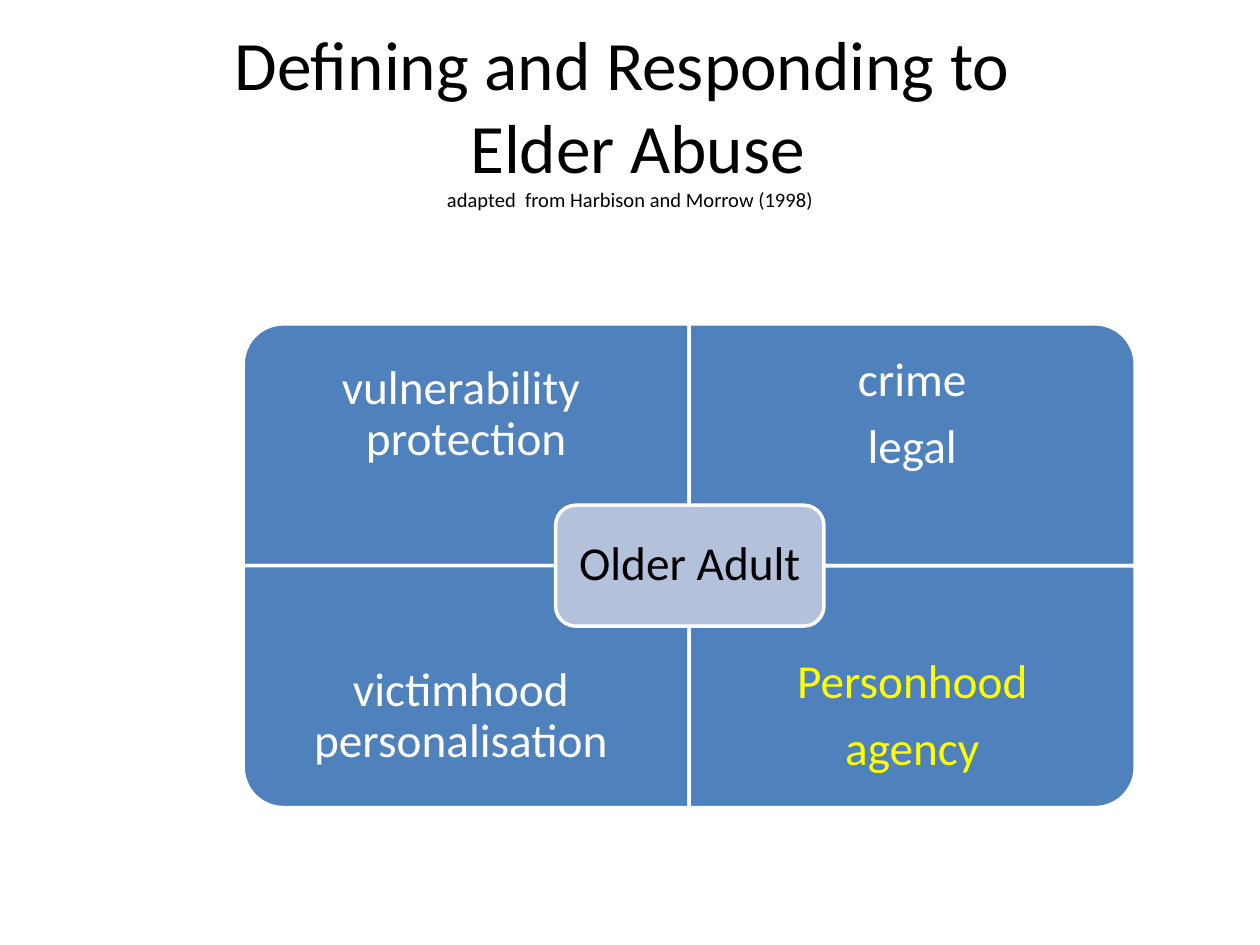
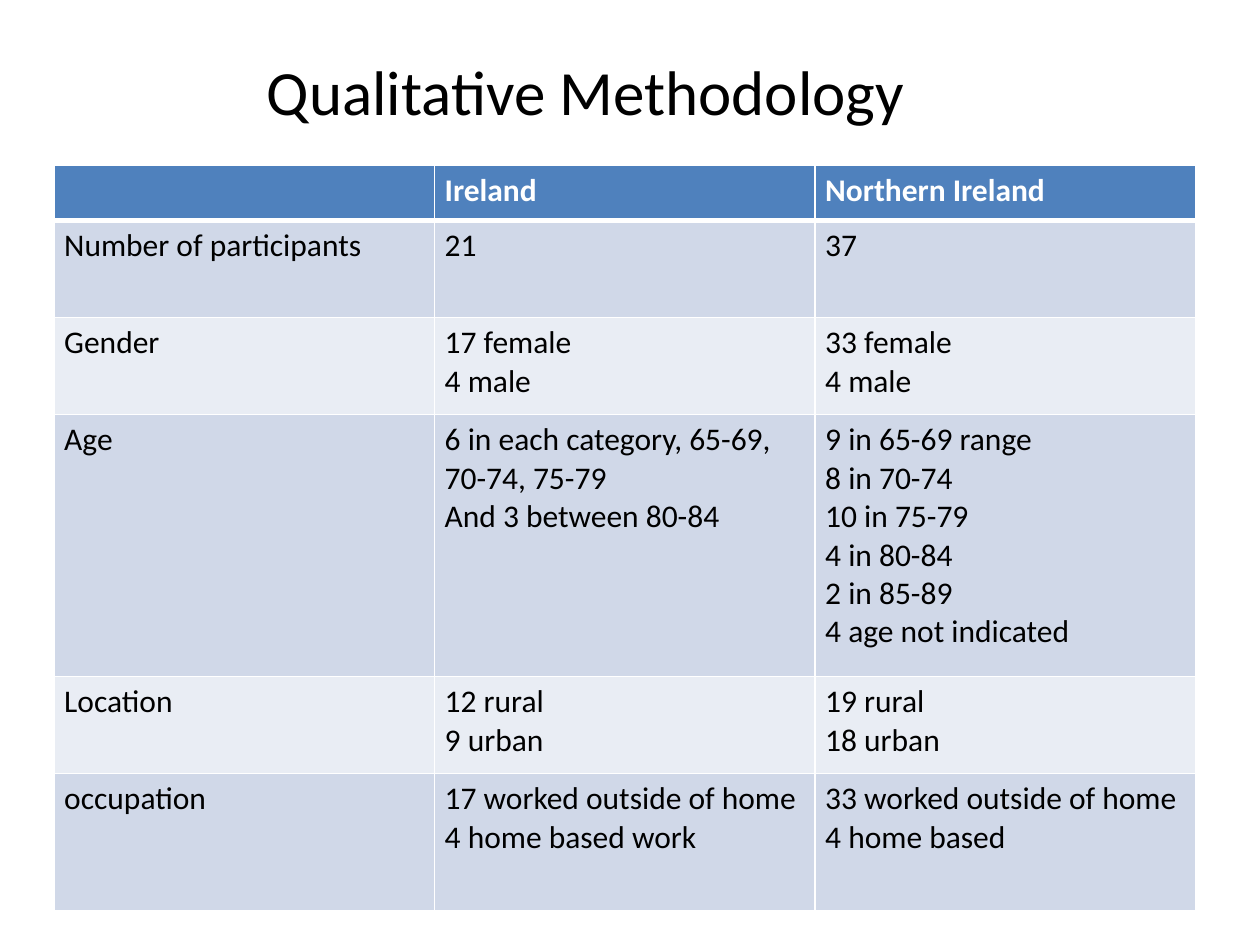
from dataclasses import dataclass

from lxml import etree
from pptx import Presentation
from pptx import util as u
from pptx.dml.color import RGBColor
from pptx.enum import shapes, text
from pptx.oxml.ns import qn

FONT = "Calibri"
COLORS = {
    "black": "000000",
    "white": "FFFFFF",
    "blue": "4F81BD",
    "pale": "B3C1DB",
    "yellow": "FFFF00",
    "band_dark": "D0D8E8",
    "band_light": "E9EDF4",
}
SHAPE = shapes.MSO_SHAPE


@dataclass
class Box:
    left: float
    top: float
    width: float
    height: float

    def inches(self) -> list:
        return [u.Inches(v) for v in (self.left, self.top, self.width, self.height)]

    def turned(self) -> "Box":
        """Same centre, with width and height swapped."""
        shift = (self.width - self.height) / 2
        return Box(self.left + shift, self.top - shift, self.height, self.width)


@dataclass
class Quadrant:
    col: int
    row: int
    rotation: int
    lines: list
    color: str = "white"


# Shared helpers
def rgb(name: str) -> RGBColor:
    return RGBColor.from_string(COLORS[name])


def add_run(p, words: str, size: float, color: str, bold: bool = False) -> None:
    r = p.add_run()
    r.text = words
    r.font.name = FONT
    r.font.size = u.Pt(size)
    r.font.bold = bold
    r.font.color.rgb = rgb(color)


def paragraphs(tf, count: int) -> list:
    return [tf.paragraphs[0]] + [tf.add_paragraph() for _ in range(count - 1)]


def add_text_frame(slide, box: Box, inset: float = 0):
    tf = slide.shapes.add_textbox(*box.inches()).text_frame
    tf.word_wrap = True
    tf.vertical_anchor = text.MSO_ANCHOR.MIDDLE
    if inset:
        tf.margin_left = tf.margin_right = u.Inches(inset)
        tf.margin_top = tf.margin_bottom = u.Inches(inset)
    return tf


def add_title(slide, box: Box, lines: list) -> None:
    """Draw (words, size) lines as one centred paragraph."""
    p = add_text_frame(slide, box).paragraphs[0]
    p.alignment = text.PP_ALIGN.CENTER
    for i, (words, size) in enumerate(lines):
        if i:
            p.add_line_break()
        add_run(p, words, size, "black")


# Matrix slide
ORIGIN_X, ORIGIN_Y, TILE_W, TILE_H = 1.93, 2.57, 3.54, 1.92
LABEL_H = 1.44
QUADRANTS = [
    Quadrant(0, 0, 270, ["vulnerability  protection"]),
    Quadrant(1, 0, 0, ["crime", "legal"]),
    Quadrant(0, 1, 180, ["victimhood  personalisation "]),
    Quadrant(1, 1, 90, ["Personhood", "agency"], "yellow"),
]


def add_tile(slide, preset, box: Box, fill: str, rotation: int = 0) -> None:
    sp = slide.shapes.add_shape(preset, *box.inches())
    sp.rotation = rotation
    sp.shadow.inherit = False
    sp.fill.solid()
    sp.fill.fore_color.rgb = rgb(fill)
    sp.line.color.rgb = rgb("white")
    sp.line.width = u.Pt(2)


def add_label(slide, box: Box, lines: list, color: str, inset: float) -> None:
    tf = add_text_frame(slide, box, inset)
    for p, words in zip(paragraphs(tf, len(lines)), lines):
        p.alignment = text.PP_ALIGN.CENTER
        p.line_spacing = 0.9
        p.space_after = u.Pt(9)
        add_run(p, words, 27, color)


def add_quadrant(slide, q: Quadrant) -> None:
    tile = Box(ORIGIN_X + q.col * TILE_W, ORIGIN_Y + q.row * TILE_H, TILE_W, TILE_H)
    frame = tile.turned() if q.rotation in (90, 270) else tile
    add_tile(slide, SHAPE.ROUND_1_RECTANGLE, frame, "blue", q.rotation)
    # Labels keep to the outer edge, clear of the centre tile
    label_top = tile.top + q.row * (TILE_H - LABEL_H)
    add_label(slide, Box(tile.left, label_top, TILE_W, LABEL_H), q.lines, q.color, 0.21)


def build_matrix(slide) -> None:
    add_title(slide, Box(0.5, 0.3, 9, 1.25), [
        ("Defining and Responding to ", 39.6),
        (" Elder Abuse", 39.6),
        ("adapted  from Harbison and Morrow (1998)", 11.7),
    ])
    for q in QUADRANTS:
        add_quadrant(slide, q)
    add_tile(slide, SHAPE.ROUNDED_RECTANGLE, Box(4.41, 4.01, 2.13, 0.96), "pale")
    add_label(slide, Box(4.46, 4.05, 2.03, 0.87), ["Older Adult"], "black", 0.11)


# Table slide
COL_W = 3.02
ROW_HEIGHTS = [0.44, 0.77, 0.77, 2.08, 0.77, 1.09]
ROWS = [
    ["", "Ireland", "Northern Ireland"],
    ["Number of participants", "21", "37"],
    ["Gender", "17 female\n4 male", "33 female\n4 male"],
    ["Age",
     "6 in each category, 65-69, 70-74, 75-79\nAnd 3 between 80-84",
     "9 in 65-69 range\n8 in 70-74\n10 in 75-79\n4 in 80-84\n2 in 85-89\n"
     "4 age not indicated"],
    ["Location", "12 rural\n9 urban", "19 rural\n18 urban"],
    ["occupation",
     "17 worked outside of home\n4 home based work",
     "33 worked outside of home\n4 home based"],
]


def set_borders(cell, widths: dict) -> None:
    tc_pr = cell._tc.get_or_add_tcPr()
    for i, (side, width) in enumerate(widths.items()):
        ln = etree.Element(qn(f"a:ln{side}"), w=str(u.Pt(width)))
        fill = etree.SubElement(ln, qn("a:solidFill"))
        etree.SubElement(fill, qn("a:srgbClr"), val=COLORS["white"])
        tc_pr.insert(i, ln)


def fill_cell(cell, words: str, row: int) -> None:
    header = row == 0
    cell.margin_left = cell.margin_right = u.Inches(0.08)
    cell.margin_top = cell.margin_bottom = u.Inches(0.05)
    cell.fill.solid()
    band = "band_dark" if row % 2 else "band_light"
    cell.fill.fore_color.rgb = rgb("blue" if header else band)
    set_borders(cell, {"L": 1, "R": 1, "T": 3 if row == 1 else 1, "B": 3 if header else 1})
    if words:
        lines = words.split("\n")
        for p, line in zip(paragraphs(cell.text_frame, len(lines)), lines):
            add_run(p, line, 18, "white" if header else "black", header)


def build_methodology(slide) -> None:
    add_title(slide, Box(0.59, 0.36, 8.23, 0.71), [("Qualitative Methodology ", 36)])
    box = Box(0.43, 1.31, 3 * COL_W, sum(ROW_HEIGHTS))
    table = slide.shapes.add_table(len(ROWS), 3, *box.inches()).table
    for col in table.columns:
        col.width = u.Inches(COL_W)
    for i, (height, row) in enumerate(zip(ROW_HEIGHTS, ROWS)):
        table.rows[i].height = u.Inches(height)
        for j, words in enumerate(row):
            fill_cell(table.cell(i, j), words, i)


def main() -> None:
    prs = Presentation()
    prs.slide_width, prs.slide_height = u.Inches(10), u.Inches(7.5)
    for build in (build_matrix, build_methodology):
        build(prs.slides.add_slide(prs.slide_layouts[6]))
    prs.save("out.pptx")


if __name__ == "__main__":
    main()
